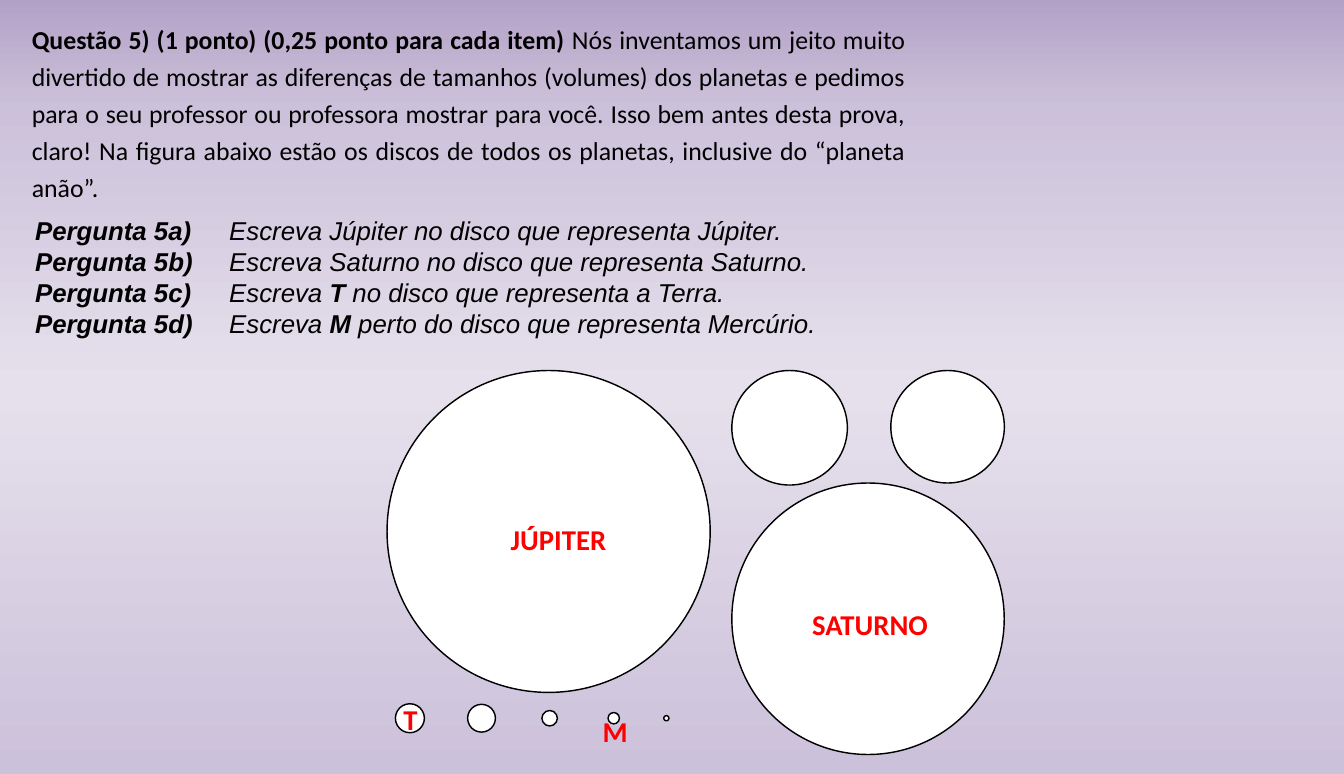
from copy import deepcopy
from typing import NamedTuple

from pptx import Presentation
from pptx.dml.color import RGBColor
from pptx.enum.shapes import MSO_SHAPE
from pptx.enum.text import MSO_AUTO_SIZE, PP_ALIGN
from pptx.oxml.ns import qn
from pptx.util import Pt


class Run(NamedTuple):
    text: str
    bold: bool = False


class Disc(NamedTuple):
    x: float
    y: float
    wide: float
    high: float


class Label(NamedTuple):
    text: str
    x: float
    y: float
    wide: float


BODY = {"name": "Calibri", "size": Pt(18)}
ITEM = {"name": "Arial", "size": Pt(18), "italic": True}
MARK = {"name": "Calibri", "size": Pt(20)}
BLACK, WHITE, RED = "000000", "FFFFFF", "FF0000"

STOPS = [(0, "B3A2C7"), (0.14, "CCC1DA"), (0.5, "E6E0EC"), (1, "CCC1DA")]

INTRO = [
    Run("Questão 5) (1 ponto) (0,25 ponto para cada item) ", True),
    Run("Nós inventamos um jeito muito divertido de mostrar as diferenças de "
        "tamanhos (volumes) dos planetas e pedimos para o seu professor ou "
        "professora mostrar para você. Isso bem antes desta prova, claro! Na "
        "figura abaixo estão os discos de todos os planetas, inclusive do "
        "“planeta anão”."),
]

TASKS = [
    [Run("Escreva Júpiter no disco que representa Júpiter.")],
    [Run("Escreva Saturno no disco que representa Saturno.")],
    [Run("Escreva "), Run("T", True), Run(" no disco que representa a Terra.")],
    [Run("Escreva "), Run("M", True),
     Run(" perto do disco que representa Mercúrio.")],
]

LARGE = [
    Disc(270, 258.5, 225.4, 224.6),
    Disc(510.5, 337, 190, 189.4),
    Disc(510.5, 258.5, 80.6, 79.9),
    Disc(621.4, 258.5, 79.2, 78.5),
]

# Centre and width of each small disc, all on one axis
AXIS = 501.1
SMALL = [(285.9, 20.2), (335.9, 19.4), (383.4, 10.8), (428.1, 7.9), (464.8, 3.6)]

LABELS = [
    Label("JÚPITER", 349.2, 360.7, 81.4),
    Label("SATURNO", 559.4, 419.8, 95.8),
    Label("T", 274.3, 486, 24.5),
    Label("M", 413.3, 494.6, 32.4),
]


def tint(code: str) -> RGBColor:
    return RGBColor.from_string(code)


def write(para, runs: list[Run], style: dict, color: str = BLACK) -> None:
    for item in runs:
        run = para.add_run()
        run.text = item.text
        for key, value in {**style, "bold": item.bold}.items():
            setattr(run.font, key, value)
        run.font.color.rgb = tint(color)


def paint(slide) -> None:
    fill = slide.background.fill
    fill.gradient()
    fill.gradient_angle = 270
    group = slide.element.find(".//" + qn("a:gsLst"))
    while len(group) < len(STOPS):
        group.append(deepcopy(group[0]))
    for stop, (place, color) in zip(fill.gradient_stops, STOPS):
        stop.position = place
        stop.color.rgb = tint(color)


def add_text(slide, x: float, y: float, wide: float, high: float, wrap: bool):
    frame = slide.shapes.add_textbox(Pt(x), Pt(y), Pt(wide), Pt(high)).text_frame
    frame.word_wrap = wrap
    frame.auto_size = MSO_AUTO_SIZE.SHAPE_TO_FIT_TEXT
    return frame.paragraphs[0]


def add_tasks(slide) -> None:
    table = slide.shapes.add_table(
        len(TASKS), 2, Pt(20.9), Pt(151.2), Pt(612), Pt(86.4)).table
    table.first_row = table.horz_banding = False
    # Plain style without borders
    style = table._tbl.tblPr.find(qn("a:tableStyleId"))
    style.text = "{2D5ABB26-0587-4C30-8999-92F81FD0307C}"
    for col, wide in zip(table.columns, (135.4, 476.6)):
        col.width = Pt(wide)
    for row, letter, task in zip(table.rows, "abcd", TASKS):
        head = [Run(f"Pergunta 5{letter})", True)]
        for cell, runs in zip(row.cells, (head, task)):
            cell.fill.background()
            cell.margin_left = cell.margin_right = Pt(3.6)
            cell.margin_top = cell.margin_bottom = Pt(0)
            para = cell.text_frame.paragraphs[0]
            para.alignment = PP_ALIGN.JUSTIFY
            write(para, runs, ITEM)


def add_disc(group, disc: Disc) -> None:
    shape = group.shapes.add_shape(MSO_SHAPE.OVAL, *map(Pt, disc))
    shape.shadow.inherit = False
    shape.fill.solid()
    shape.fill.fore_color.rgb = tint(WHITE)
    shape.line.color.rgb = tint(BLACK)
    shape.line.width = Pt(1)


def main() -> None:
    deck = Presentation()
    deck.slide_width, deck.slide_height = Pt(937.5), Pt(540)
    slide = deck.slides.add_slide(deck.slide_layouts[6])
    paint(slide)

    # Question and its items
    para = add_text(slide, 15.1, 8.6, 623.5, 136.1, True)
    para.alignment = PP_ALIGN.JUSTIFY
    para.line_spacing = 1.2
    write(para, INTRO, BODY)
    add_tasks(slide)

    # Planet discs
    group = slide.shapes.add_group_shape()
    small = [Disc(mid - size / 2, AXIS - size / 2, size, size)
             for mid, size in SMALL]
    for disc in LARGE + small:
        add_disc(group, disc)

    # Answers
    for label in LABELS:
        para = add_text(slide, label.x, label.y, label.wide, 31.7, False)
        write(para, [Run(label.text, True)], MARK, RED)

    deck.save("out.pptx")


if __name__ == "__main__":
    main()
